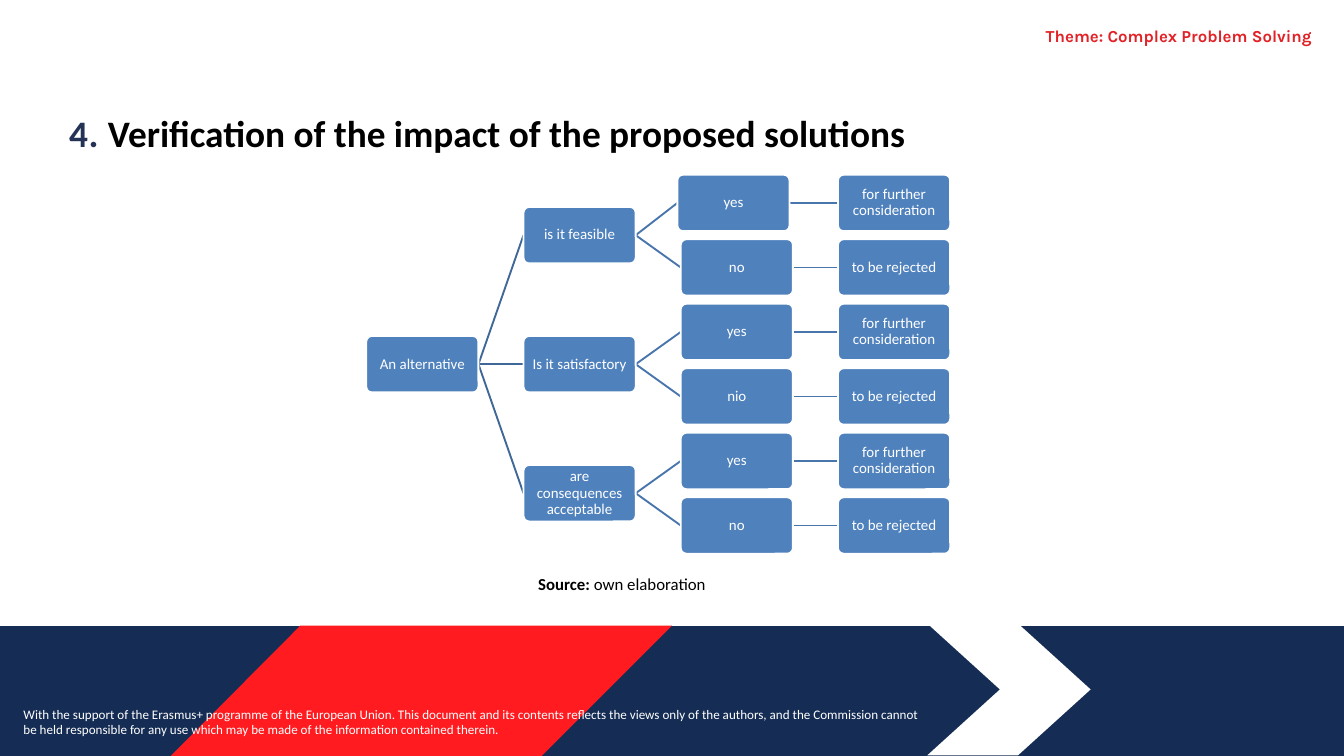
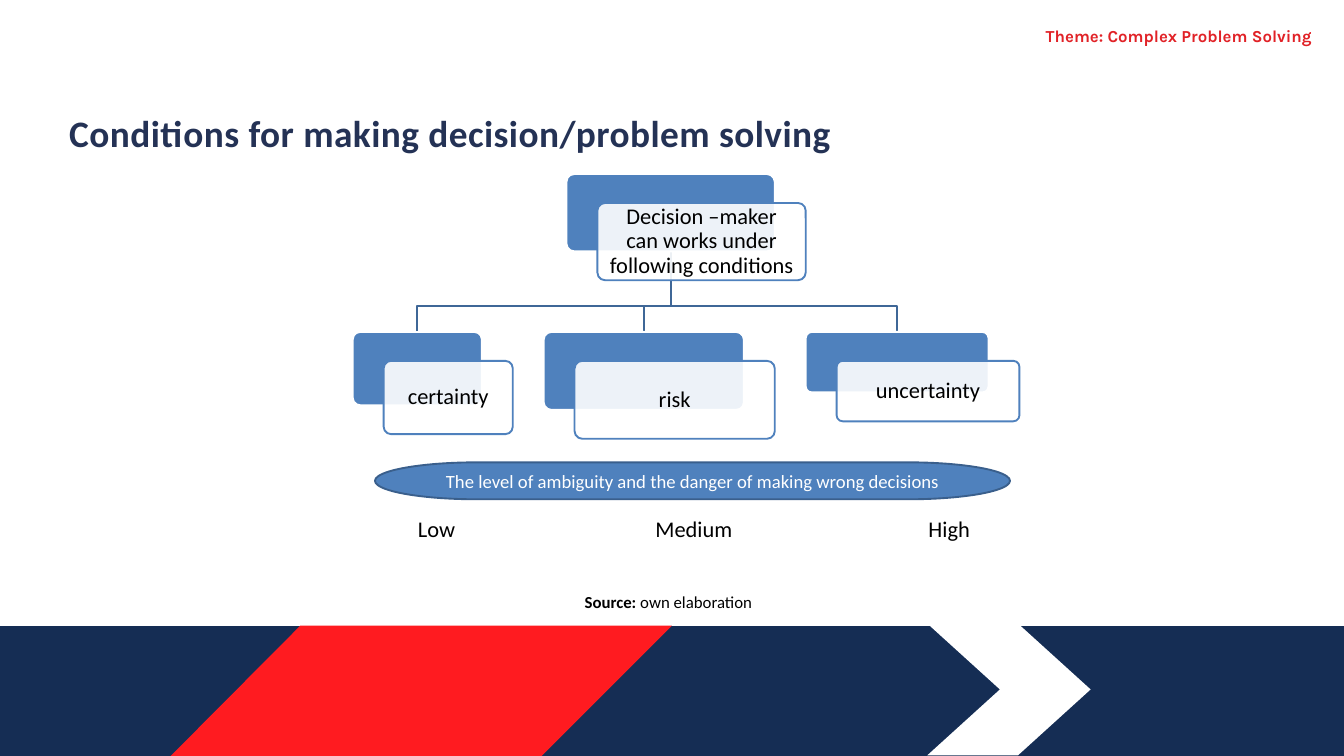
from lxml import etree
from pptx import Presentation
from pptx import util as u
from pptx.dml.color import RGBColor
from pptx.enum import shapes, text
from pptx.oxml import ns

COLUMNS, ROWS = 20, 11.25
NAVY = RGBColor(0x15, 0x2D, 0x54)
RED = RGBColor(0xFF, 0x1B, 0x20)
THEME_RED = RGBColor(0xE1, 0x22, 0x27)
TITLE_BLUE = RGBColor(0x24, 0x32, 0x55)
BLUE = RGBColor(0x4F, 0x81, 0xBD)
OUTLINE_BLUE = RGBColor(0x3A, 0x5F, 0x8C)
BRANCH_BLUE = RGBColor(0x3F, 0x67, 0x97)
LEAF_BLUE = RGBColor(0x48, 0x75, 0xAC)
WHITE = RGBColor(0xFF, 0xFF, 0xFF)
BLACK = RGBColor(0, 0, 0)
FONT, THEME_FONT = "Calibri", "Karla"
LEFT, CENTER, RIGHT = text.PP_ALIGN.LEFT, text.PP_ALIGN.CENTER, text.PP_ALIGN.RIGHT
LINE_WIDTH = u.Pt(2)


class Deck:
    def __init__(self):
        self.presentation = Presentation()
        self.presentation.slide_width = u.Inches(20)
        self.presentation.slide_height = u.Inches(11.25)
        self.slide = None

    def x(self, columns):
        return round(self.presentation.slide_width * columns / COLUMNS)

    def y(self, rows):
        return round(self.presentation.slide_height * rows / ROWS)

    def place(self, box):
        left, top, width, height = box
        return self.x(left), self.y(top), self.x(width), self.y(height)

    def new_slide(self, title_runs, title_height):
        self.slide = self.presentation.slides.add_slide(self.presentation.slide_layouts[5])
        self.bands()
        self.title(title_runs, title_height)
        self.label((9, 0.37, 10.52, 0.32), [("Theme: Complex Problem Solving", {})],
                   18, THEME_RED, RIGHT, font=THEME_FONT, bold=True, insets=(0, 0.01, 0, 0))

    def bands(self):
        bottom, top = ROWS, 9.31
        self.outline([(0, top), (COLUMNS, top), (COLUMNS, bottom), (0, bottom)], NAVY)
        self.outline([(13.8, 9.28), (15.15, 9.28), (16.23, 10.26), (15.15, 11.24),
                      (13.8, 11.24), (14.88, 10.26)], WHITE)
        self.outline([(4.47, top), (10, top), (8.06, bottom), (2.54, bottom)], RED)

    def title(self, runs, height):
        title = self.slide.shapes.title
        title.left, title.top, title.width, title.height = self.place((1.03, 1.62, 18.39, height))
        self.fill_text(title, runs, 40, TITLE_BLUE, LEFT, bold=True,
                       insets=(0, 0.02, 0, 0), anchor=text.MSO_ANCHOR.TOP)
        first_run = next(title.element.iter(ns.qn("a:rPr")))
        first_run.set("spc", "50")

    def fill_text(self, shape, runs, size, color, align=CENTER, font=FONT, bold=False,
                  insets=None, anchor=text.MSO_ANCHOR.MIDDLE, spacing=None, wrap=True):
        frame = shape.text_frame
        frame.word_wrap = wrap
        frame.auto_size = text.MSO_AUTO_SIZE.NONE
        frame.vertical_anchor = anchor
        if insets:
            (frame.margin_left, frame.margin_top,
             frame.margin_right, frame.margin_bottom) = map(u.Inches, insets)
        paragraph = frame.paragraphs[0]
        paragraph.alignment = align
        if spacing:
            paragraph.line_spacing = spacing
        paragraph.font.name = font
        paragraph.font.size = u.Pt(size)
        paragraph.font.bold = bold
        paragraph.font.color.rgb = color
        for words, style in runs:
            run = paragraph.add_run()
            run.text = words
            if "color" in style:
                run.font.color.rgb = style["color"]
            if "bold" in style:
                run.font.bold = style["bold"]

    def label(self, box, runs, size, color=BLACK, align=CENTER, **style):
        shape = self.slide.shapes.add_textbox(*self.place(box))
        self.fill_text(shape, runs, size, color, align, anchor=text.MSO_ANCHOR.TOP, **style)

    def source(self, left, top):
        self.label((left, top, 2.71, 0.4),
                   [("Source: ", {"bold": True}), ("own elaboration", {})], 18, wrap=False)

    def box(self, box, fill=BLUE, line=WHITE, kind=shapes.MSO_SHAPE.ROUNDED_RECTANGLE):
        shape = self.slide.shapes.add_shape(kind, *self.place(box))
        shape.shadow.inherit = False
        shape.fill.solid()
        shape.fill.fore_color.rgb = fill
        shape.line.color.rgb = line
        shape.line.width = LINE_WIDTH
        if kind == shapes.MSO_SHAPE.ROUNDED_RECTANGLE:
            shape.adjustments[0] = 0.1
        return shape

    def node(self, box, words):
        self.fill_text(self.box(box), [(words, {})], 16, WHITE, insets=(0.04,) * 4, spacing=0.9)

    def card(self, box, words):
        left, top, width, height = box
        self.box(box)
        front = self.box((left + 0.46, top + 0.43, width, height), WHITE, BLUE)
        fill_color = front.element.spPr.find(ns.qn("a:solidFill"))[0]
        etree.SubElement(fill_color, ns.qn("a:alpha"), val="90000")
        self.fill_text(front, [(words, {})], 24, BLACK, insets=(0.13,) * 4, spacing=0.9)

    def polyline(self, points, close):
        start, *rest = [(self.x(column), self.y(row)) for column, row in points]
        builder = self.slide.shapes.build_freeform(*start)
        builder.add_line_segments(rest, close=close)
        shape = builder.convert_to_shape()
        shape.shadow.inherit = False
        return shape

    def outline(self, points, fill):
        shape = self.polyline(points, True)
        shape.fill.solid()
        shape.fill.fore_color.rgb = fill
        shape.line.fill.background()

    def bent_line(self, points):
        shape = self.polyline(points, False)
        shape.fill.background()
        shape.line.color.rgb = BRANCH_BLUE
        shape.line.width = LINE_WIDTH

    def link(self, start, end, color):
        connector = self.slide.shapes.add_connector(
            shapes.MSO_CONNECTOR.STRAIGHT, self.x(start[0]), self.y(start[1]),
            self.x(end[0]), self.y(end[1]))
        connector.line.color.rgb = color
        connector.line.width = LINE_WIDTH
        etree.SubElement(connector.element.spPr, ns.qn("a:effectLst"))


def verification_slide(deck):
    deck.new_slide([("4. ", {"color": TITLE_BLUE}),
                    ("Verification of the impact of the proposed solutions", {"color": BLACK})], 2.16)
    deck.label((0.25, 10.46, 13.75, 0.57), [(
        "With the support of the Erasmus+ programme of the European Union. This document and its "
        "contents reflects the views only of the authors, and the Commission cannot be held "
        "responsible for any use which may be made of the information contained therein.", {})],
        14, WHITE, LEFT)

    width, height, row_step, first_row = 1.67, 0.84, 0.96, 3.02
    root_x, question_x, answer_x, outcome_x = [5.45 + 2.34 * level for level in range(4)]
    questions = [("is it feasible", ("yes", "no")),
                 ("Is it satisfactory", ("yes", "nio")),
                 ("are consequences acceptable", ("yes", "no"))]
    outcomes = ("for further consideration", "to be rejected")
    root_y = first_row + 2.5 * row_step
    nodes = [(root_x, root_y, "An alternative")]
    for index, (question, answers) in enumerate(questions):
        question_y = first_row + (2 * index + 0.5) * row_step
        nodes.append((question_x, question_y, question))
        deck.link((root_x + width, root_y), (question_x, question_y), BRANCH_BLUE)
        for branch, (answer, outcome) in enumerate(zip(answers, outcomes)):
            row_y = first_row + (2 * index + branch) * row_step
            left = answer_x - 0.05 if index == branch == 0 else answer_x
            nodes += [(left, row_y, answer), (outcome_x, row_y, outcome)]
            deck.link((question_x + width, question_y), (left, row_y), LEAF_BLUE)
            deck.link((left + width, row_y), (outcome_x, row_y), LEAF_BLUE)
    for left, middle, words in nodes:
        deck.node((left, middle - height / 2, width, height), words)
    deck.source(7.9, 8.49)


def conditions_slide(deck):
    deck.new_slide([("Conditions for making decision/problem solving", {"color": TITLE_BLUE})], 0.69)
    stem_x, stem_top, fork_y, card_top = 9.98, 3.74, 4.56, 4.94
    conditions = [("certainty", 5.25, 1.92, 1.09),
                  ("risk", 8.09, 2.98, 1.16),
                  ("uncertainty", 11.99, 2.72, 0.9)]
    for _, left, width, _ in conditions:
        middle = left + width / 2
        deck.bent_line([(stem_x, stem_top), (stem_x, fork_y), (middle, fork_y), (middle, card_top)])
    deck.card((8.43, 2.59, 3.1, 1.15), "Decision –maker can works under following conditions")
    for words, left, width, height in conditions:
        deck.card((left, card_top, width, height), words)

    scale = deck.box((5.58, 6.88, 9.45, 0.55), line=OUTLINE_BLUE,
                     kind=shapes.MSO_SHAPE.FLOWCHART_TERMINATOR)
    deck.fill_text(scale, [("The level of ambiguity and the danger of making wrong decisions", {})],
                   20, WHITE)
    for level, left in (("Low", 5.7), ("Medium", 9.53), ("High", 13.33)):
        deck.label((left, 7.62, 1.59, 0.5), [(level, {})], 24)
    deck.source(8.59, 8.75)


def main():
    deck = Deck()
    verification_slide(deck)
    conditions_slide(deck)
    deck.presentation.save("out.pptx")


if __name__ == "__main__":
    main()
